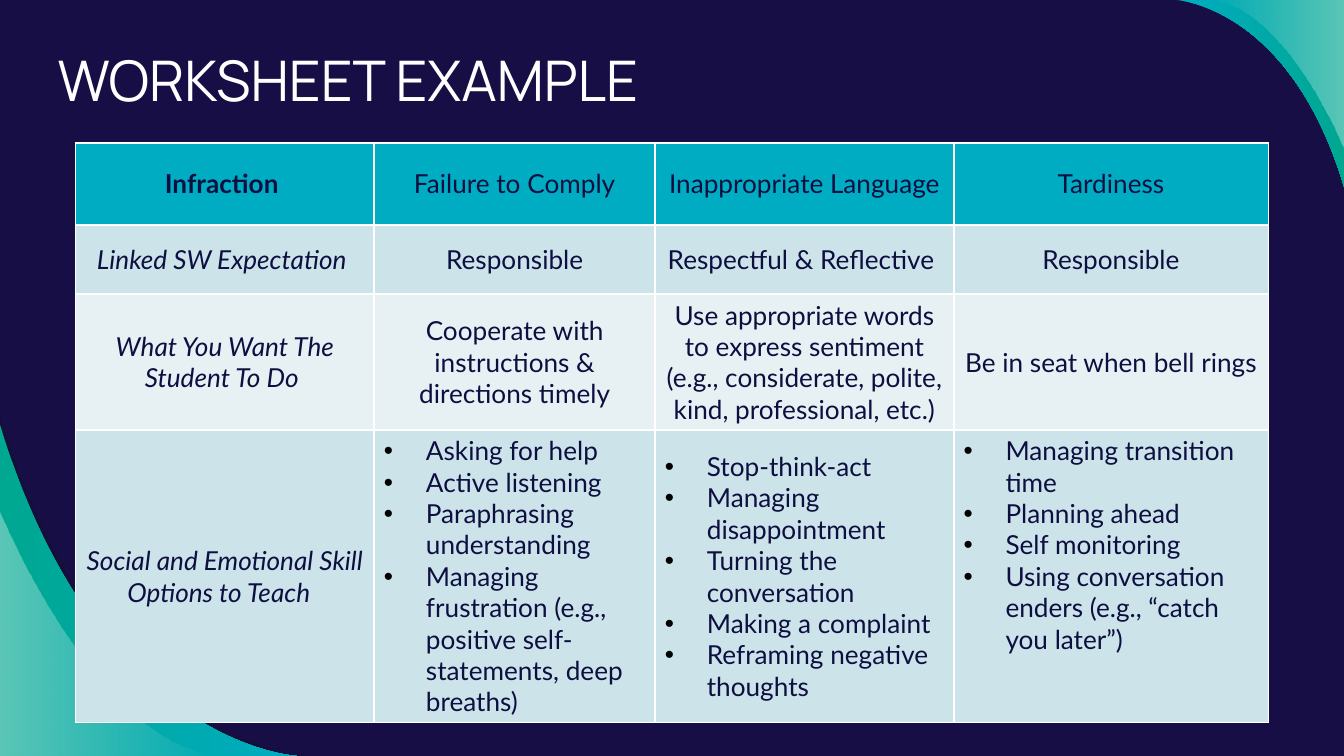
import pptx
import pptx.dml.color
import pptx.enum.text
import pptx.oxml
import pptx.oxml.ns
import pptx.util

Pt = pptx.util.Pt
ANCHOR = pptx.enum.text.MSO_ANCHOR
ALIGN = pptx.enum.text.PP_ALIGN

COLORS = {
    "background": "160E44",
    "shade": "12102F",
    "cyan": "00ACC2",
    "green": "00A791",
    "white": "FFFFFF",
    "ink": "0D0F41",
    "band": "CCE3E9",
    "light": "E7F1F4",
    "bullet": "000000",
}

COLUMN_WIDTHS = [160, 150.5, 160, 168.5]
ROW_HEIGHTS = [44, 37, 73, 156.5]
ROW_FILLS = ["cyan", "band", "light", "band"]
ROWS = [
    ["Infraction ", "Failure to Comply", "Inappropriate Language", "Tardiness"],
    ["Linked SW Expectation ", "Responsible", "Respectful & Reflective ", "Responsible"],
    [
        "What You Want The Student To Do ",
        "Cooperate with instructions & directions timely",
        "Use appropriate words to express sentiment "
        "(e.g., considerate, polite, kind, professional, etc.)",
        "Be in seat when bell rings",
    ],
    [
        "Social and Emotional Skill Options to Teach  ",
        [
            "Asking for help",
            "Active listening",
            "Paraphrasing understanding",
            "Managing frustration (e.g., positive self-statements, deep breaths)",
        ],
        [
            "Stop-think-act",
            "Managing disappointment",
            "Turning the conversation",
            "Making a complaint",
            "Reframing negative thoughts",
        ],
        [
            "Managing transition time",
            "Planning ahead",
            "Self monitoring",
            "Using conversation enders (e.g., “catch you later”)",
        ],
    ],
]


def rgb(name):
    return pptx.dml.color.RGBColor.from_string(COLORS[name])


def xml(tag, body="", **attributes):
    pairs = "".join(f' {key}="{value}"' for key, value in attributes.items())
    namespace = pptx.oxml.ns.nsdecls("a")
    return pptx.oxml.parse_xml(f"<a:{tag} {namespace}{pairs}>{body}</a:{tag}>")


def solid(name):
    return f'<a:solidFill><a:srgbClr val="{COLORS[name]}"/></a:solidFill>'


class Page:
    def __init__(self, deck):
        self.slide = deck.slides.add_slide(deck.slide_layouts[6])
        self.slide.background.fill.solid()
        self.slide.background.fill.fore_color.rgb = rgb("background")
        self.body_font = "Lato"
        self.title_font = "Manrope"

    def corner(self, curve, corner, colors, opacities=None):
        points = [(Pt(x), Pt(y)) for x, y in curve + [corner]]
        builder = self.slide.shapes.build_freeform(*points[0])
        builder.add_line_segments(points[1:], close=True)
        shape = builder.convert_to_shape()
        self.bend(shape)
        shape.shadow.inherit = False
        shape.line.fill.background()
        if len(colors) == 1:
            shape.fill.solid()
            shape.fill.fore_color.rgb = rgb(colors[0])
        else:
            shape.fill.gradient()
            shape.fill.gradient_angle = 0
            for stop, color in zip(shape.fill.gradient_stops, colors):
                stop.color.rgb = rgb(color)
        if opacities:
            tag = pptx.oxml.ns.qn("a:srgbClr")
            for element, opacity in zip(shape._element.spPr.iter(tag), opacities):
                element.append(xml("alpha", val=opacity * 1000))

    def bend(self, shape):
        lines = list(shape._element.spPr.iter(pptx.oxml.ns.qn("a:lnTo")))[:3]
        curve = xml("cubicBezTo")
        lines[0].addprevious(curve)
        for line in lines:
            curve.append(line[0])
            line.getparent().remove(line)

    def title(self, text, left, top, width, height):
        box = self.slide.shapes.add_textbox(Pt(left), Pt(top), Pt(width), Pt(height))
        frame = box.text_frame
        frame.word_wrap = True
        frame.margin_left = frame.margin_right = Pt(7.2)
        frame.margin_top = frame.margin_bottom = Pt(7.2)
        para = frame.paragraphs[0]
        para.text = text
        self.style(para, self.title_font, 30, "white")

    def style(self, para, font, size, color):
        para.font.name = font
        para.font.size = Pt(size)
        para.font.color.rgb = rgb(color)

    def table(self, left, top):
        frame = self.slide.shapes.add_table(
            len(ROWS), len(COLUMN_WIDTHS), Pt(left), Pt(top), Pt(sum(COLUMN_WIDTHS)), Pt(sum(ROW_HEIGHTS))
        )
        grid = frame.table
        for column, width in zip(grid.columns, COLUMN_WIDTHS):
            column.width = Pt(width)
        for row, height in zip(grid.rows, ROW_HEIGHTS):
            row.height = Pt(height)
        for row, texts in enumerate(ROWS):
            for column, content in enumerate(texts):
                self.cell(grid.cell(row, column), content, ROW_FILLS[row], row == 0, column == 0)
        grid.cell(3, 3).vertical_anchor = ANCHOR.TOP

    def cell(self, cell, content, fill, header, label):
        cell.margin_left = cell.margin_right = Pt(5.2)
        cell.margin_top = cell.margin_bottom = Pt(2.6)
        cell.vertical_anchor = ANCHOR.MIDDLE
        properties = cell._tc.get_or_add_tcPr()
        for side in ("lnL", "lnR", "lnT", "lnB"):
            properties.append(xml(side, solid("white"), w=Pt(1)))
        cell.fill.solid()
        cell.fill.fore_color.rgb = rgb(fill)
        bulleted = isinstance(content, list)
        lines = content if bulleted else [content]
        cell.text_frame.text = "\n".join(lines)
        for para in cell.text_frame.paragraphs:
            if bulleted:
                self.bullet(para)
            else:
                para.alignment = ALIGN.CENTER
            self.style(para, self.body_font, 14, "ink")
            para.font.bold = header and label
            para.font.italic = label and not header

    def bullet(self, para):
        properties = para._p.get_or_add_pPr()
        properties.set("marL", str(Pt(22.5)))
        properties.set("indent", str(-Pt(22.5)))
        properties.append(xml("buClr", f'<a:srgbClr val="{COLORS["bullet"]}"/>'))
        properties.append(xml("buFont", typeface="Arial"))
        properties.append(xml("buChar", char="•"))


def main():
    deck = pptx.Presentation()
    deck.slide_width, deck.slide_height = Pt(720), Pt(405)
    page = Page(deck)
    bottom_left, top_right = (0, 405), (720, 0)
    page.corner([(0, 223), (52.5, 399), (163.5, 405), (163.5, 405)], bottom_left, ["shade"], [54])
    page.corner([(0, 227.5), (52, 400), (159, 405), (159, 405)], bottom_left, ["green", "cyan"])
    page.corner([(0, 273.5), (0, 273.5), (49.5, 397), (116.5, 405)], bottom_left, ["white", "white"], [36, 0])
    page.corner([(630, 0), (630, 0), (691, 3), (720, 100)], top_right, ["cyan", "green"])
    page.corner([(649, 0), (690, 5), (720, 80.5), (720, 80.5)], top_right, ["white", "white"], [0, 36])
    page.title("WORKSHEET EXAMPLE", 23.75, 17.25, 656, 60)
    page.table(40.5, 76.5)
    deck.save("out.pptx")


if __name__ == "__main__":
    main()
